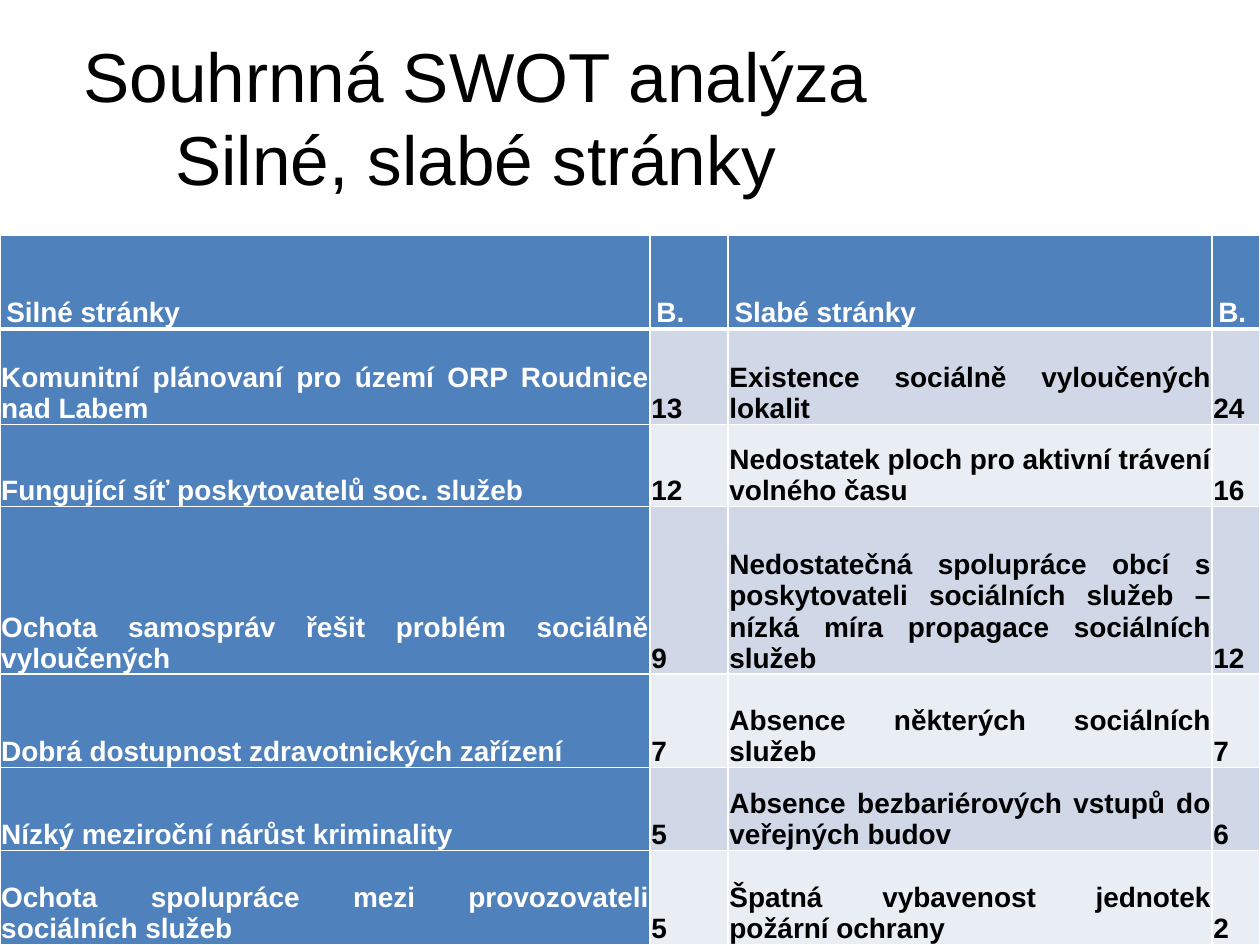
from lxml.etree import SubElement
from pptx import Presentation
from pptx.dml.color import RGBColor
from pptx.enum.text import MSO_ANCHOR, MSO_AUTO_SIZE, PP_ALIGN
from pptx.oxml.ns import qn
from pptx.util import Inches, Pt

BLACK = RGBColor(0x00, 0x00, 0x00)
WHITE = RGBColor(0xFF, 0xFF, 0xFF)
BLUE = RGBColor(0x4F, 0x81, 0xBD)
BANDS = [RGBColor(0xE9, 0xED, 0xF4), RGBColor(0xD0, 0xD8, 0xE8)]

COLUMN_WIDTHS = [5.16, 0.62, 3.84, 0.38]
ROW_HEIGHTS = [0.74, 0.76, 0.65, 1.33, 0.74, 0.66, 0.75]
ROWS = [
    ("Silné stránky", "B.", "Slabé stránky", "B."),
    ("Komunitní plánovaní pro území ORP Roudnice nad Labem", "13",
     "Existence sociálně vyloučených lokalit", "24"),
    ("Fungující síť poskytovatelů soc. služeb", "12",
     "Nedostatek ploch pro aktivní trávení volného času", "16"),
    ("Ochota samospráv řešit problém sociálně vyloučených", "9",
     "Nedostatečná spolupráce obcí s poskytovateli sociálních služeb – "
     "nízká míra propagace sociálních služeb", "12"),
    ("Dobrá dostupnost zdravotnických zařízení", "7",
     "Absence některých sociálních služeb", "7"),
    ("Nízký meziroční nárůst kriminality", "5",
     "Absence bezbariérových vstupů do veřejných budov", "6"),
    ("Ochota spolupráce mezi provozovateli sociálních služeb", "5",
     "Špatná vybavenost jednotek požární ochrany", "2"),
]


def add_run(paragraph, text, size, color, bold=False):
    run = paragraph.add_run()
    run.text = text
    run.font.name = "Arial"
    run.font.size = Pt(size)
    run.font.bold = bold
    run.font.color.rgb = color


def add_border(cell, side, width):
    line = SubElement(cell._tc.get_or_add_tcPr(), qn(f"a:{side}"), w=str(Pt(width)))
    fill = SubElement(line, qn("a:solidFill"))
    SubElement(fill, qn("a:srgbClr"), val=str(WHITE))


presentation = Presentation()
presentation.slide_width = Inches(10)
presentation.slide_height = Inches(7.5)
slide = presentation.slides.add_slide(presentation.slide_layouts[5])

title = slide.shapes.title
title.left, title.top = Inches(0.5), Inches(0.3)
title.width, title.height = Inches(6.55), Inches(1.25)
title.text_frame.auto_size = MSO_AUTO_SIZE.NONE
title.text_frame.word_wrap = True
title.text_frame.vertical_anchor = MSO_ANCHOR.MIDDLE
paragraph = title.text_frame.paragraphs[0]
paragraph.alignment = PP_ALIGN.CENTER
add_run(paragraph, "Souhrnná SWOT analýza", 39.6, BLACK)
paragraph.add_line_break()
add_run(paragraph, "Silné, slabé stránky", 39.6, BLACK)

table_height = sum(ROW_HEIGHTS)
table = slide.shapes.add_table(
    len(ROWS), len(COLUMN_WIDTHS), 0, Inches(7.5 - table_height),
    presentation.slide_width, Inches(table_height)).table
for column, width in zip(table.columns, COLUMN_WIDTHS):
    column.width = Inches(width)
for row, height in zip(table.rows, ROW_HEIGHTS):
    row.height = Inches(height)

for row_index, texts in enumerate(ROWS):
    header = row_index == 0
    for column_index, text in enumerate(texts):
        cell = table.cell(row_index, column_index)
        on_blue = header or column_index == 0
        cell.vertical_anchor = MSO_ANCHOR.BOTTOM
        cell.margin_left = cell.margin_right = Inches(0.05 if header else 0.01)
        cell.margin_top = Inches(0 if header else 0.01)
        cell.margin_bottom = 0
        add_border(cell, "lnL", 1)
        add_border(cell, "lnR", 1)
        add_border(cell, "lnT", 3 if row_index == 1 else 1)
        add_border(cell, "lnB", 3 if header else 1)
        cell.fill.solid()
        cell.fill.fore_color.rgb = BLUE if on_blue else BANDS[row_index % 2]
        paragraph = cell.text_frame.paragraphs[0]
        paragraph.alignment = PP_ALIGN.JUSTIFY
        if header:
            paragraph.line_spacing = 1.15
        add_run(paragraph, text, 16, WHITE if on_blue else BLACK, bold=True)

presentation.save("out.pptx")
